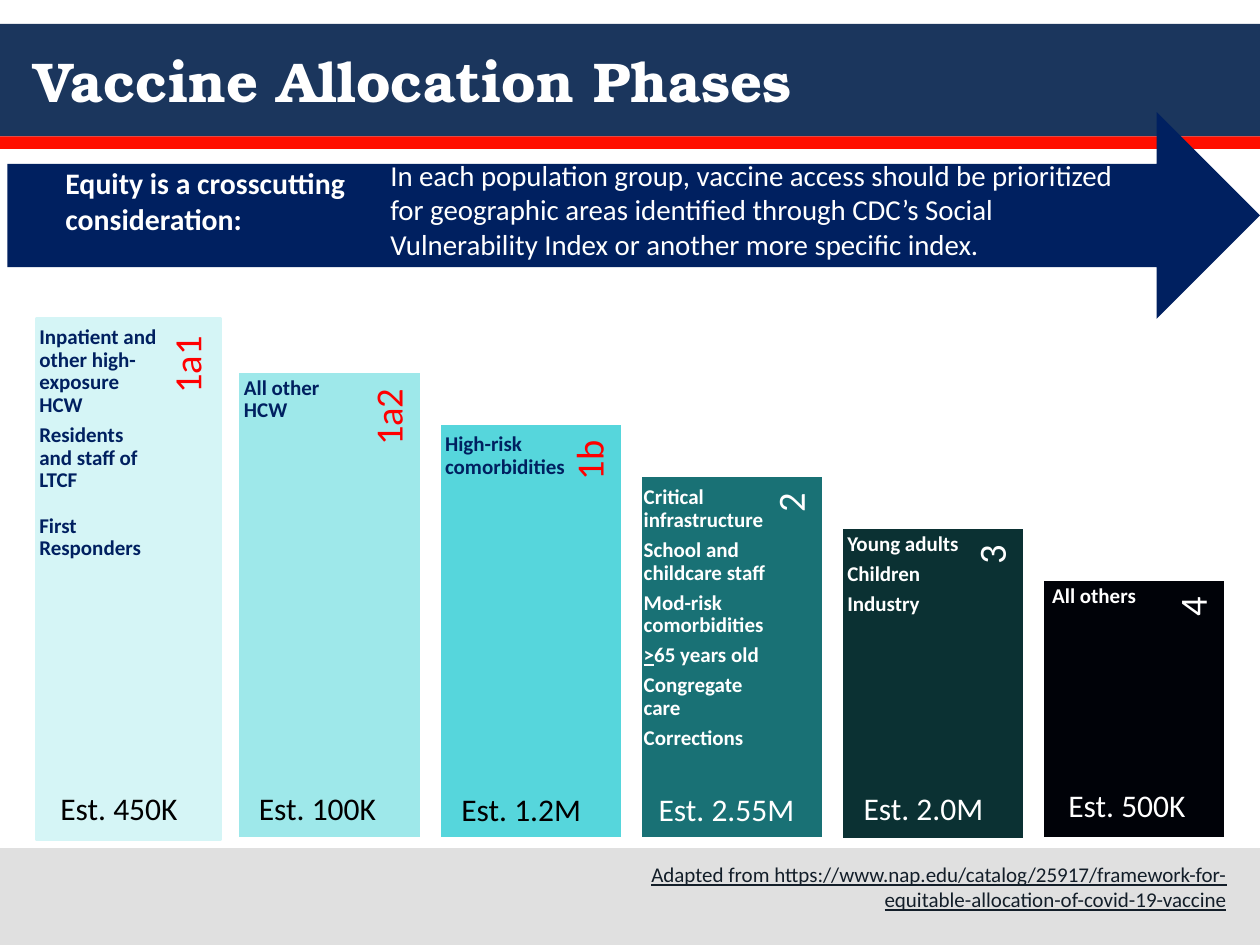
import pptx
import pptx.util
import pptx.dml.color
import pptx.enum.shapes
import pptx.enum.text
from dataclasses import dataclass

Pt = pptx.util.Pt
SHAPES = pptx.enum.shapes.MSO_SHAPE
ALIGN = pptx.enum.text.PP_ALIGN
ANCHOR = pptx.enum.text.MSO_ANCHOR
NAVY, WHITE, RED, BLACK = "002060", "FFFFFF", "FF0000", "000000"
INSETS = (7.2, 3.6, 7.2, 3.6)
WIDTH, HEIGHT = 720, 540


@dataclass
class Phase:
    label: str
    groups: list
    estimate: str
    fill: str
    line: str
    label_color: str
    group_color: str
    estimate_color: str
    groups_box: tuple
    estimate_offset: tuple


PHASES = [
    Phase("1a1", ["Inpatient and other high-exposure HCW", "Residents and staff of LTCF",
                  "First Responders"],
          "Est. 450K", "D5F5F6", "D5F5F6", RED, NAVY, BLACK, (-2, 0.7, 76.3), (6.5, 32.4)),
    Phase("1a2", ["All other HCW"],
          "Est. 100K", "9EE8EA", WHITE, RED, NAVY, BLACK, (0, 0, 73.4), (5, 32.4)),
    Phase("1b", ["High-risk comorbidities"],
          "Est. 1.2M", "56D6DC", WHITE, RED, NAVY, BLACK, (0, 2.2, 93.6), (5.8, 31.7)),
    Phase("2", ["Critical infrastructure", "School and childcare staff", "Mod-risk comorbidities",
                ">65 years old", "Congregate care", "Corrections"],
          "Est. 2.55M", "197175", WHITE, WHITE, WHITE, WHITE, (-1.4, 2.9, 79.9), (3.6, 31.7)),
    Phase("3", ["Young adults", "Children", "Industry"],
          "Est. 2.0M", "0B3133", WHITE, WHITE, WHITE, WHITE, (0, 0, 73.4), (5.8, 32.4)),
    Phase("4", ["All others"],
          "Est. 500K", "000208", WHITE, WHITE, WHITE, WHITE, (2.2, 0, 69.8), (7.9, 33.8)),
]


def rgb(color):
    return pptx.dml.color.RGBColor.from_string(color)


def add_block(slide, left, top, width, height, fill, kind=SHAPES.RECTANGLE, line=None):
    shape = slide.shapes.add_shape(kind, Pt(left), Pt(top), Pt(width), Pt(height))
    shape.shadow.inherit = False
    shape.fill.solid()
    shape.fill.fore_color.rgb = rgb(fill)
    if line:
        shape.line.color.rgb = rgb(line)
        shape.line.width = Pt(2)
    else:
        shape.line.fill.background()
    return shape


def add_text(slide, left, top, width, height, texts, size, color, font="Calibri", bold=False,
             underline=False, align=ALIGN.LEFT, anchor=ANCHOR.TOP, insets=INSETS, spacing=None):
    box = slide.shapes.add_textbox(Pt(left), Pt(top), Pt(width), Pt(height))
    frame = box.text_frame
    frame.word_wrap = True
    frame.vertical_anchor = anchor
    frame.margin_left, frame.margin_top, frame.margin_right, frame.margin_bottom = map(Pt, insets)
    for index, text in enumerate(texts):
        paragraph = frame.paragraphs[0] if index == 0 else frame.add_paragraph()
        if text.startswith(">"):
            paragraph.add_run().text = ">"
            paragraph.runs[0].font.underline = True
            text = text[1:]
        paragraph.add_run().text = text
        paragraph.alignment = align
        if spacing:
            paragraph.line_spacing = spacing
        paragraph.font.name = font
        paragraph.font.size = Pt(size)
        paragraph.font.bold = bold
        paragraph.font.color.rgb = rgb(color)
        if underline:
            paragraph.font.underline = True
    return box


def add_header(slide, left, top, width, height):
    add_block(slide, left, top, width, height, "1B365D")
    add_block(slide, left, top + height, width, 7.2, "FF0F00")
    add_text(slide, left + 12, top, width - 24, height, ["Vaccine Allocation Phases"], 32, WHITE,
             font="TeX Gyre Bonum", bold=True, anchor=ANCHOR.MIDDLE)


def add_equity_arrow(slide, left, top, width, height):
    add_block(slide, left, top, width, height, NAVY, SHAPES.RIGHT_ARROW)
    add_text(slide, left + 26, top + 26.6, 180, 48, ["Equity is a crosscutting consideration:"],
             17, WHITE, bold=True)
    add_text(slide, left + 211.7, top + 22.3, 436.3, 69,
             ["In each population group, vaccine access should be prioritized for geographic areas "
              "identified through CDC’s Social Vulnerability Index or another more specific index."],
             16.5, WHITE)


def add_phase(slide, phase, left, top, width, height):
    add_block(slide, left, top, width, height, phase.fill, line=phase.line)
    length, thickness = height * 0.9, 27.4
    label = add_text(slide, left + 88.2 - length / 2, top + (length - thickness) / 2,
                     length, thickness, [phase.label], 22, phase.label_color, align=ALIGN.RIGHT,
                     anchor=ANCHOR.MIDDLE, insets=(6.5, 0, 10, 2.2), spacing=0.9)
    label.rotation = 270
    shift, drop, groups_width = phase.groups_box
    groups = add_text(slide, left + shift, top + drop, groups_width, height, phase.groups, 12,
                      phase.group_color, bold=True, insets=(3.6,) * 4, spacing=0.9)
    for paragraph in groups.text_frame.paragraphs:
        wide = paragraph.text.startswith("Residents")
        paragraph.space_after = Pt(13 if wide else 4.2)
    shift, rise = phase.estimate_offset
    add_text(slide, left + shift, top + height - rise, 104.4, 29, [phase.estimate], 18,
             phase.estimate_color)


def add_phases(slide, left, top, width, height):
    bar_width, step = 105.1, 29.8
    pitch = (width - bar_width) / (len(PHASES) - 1)
    for index, phase in enumerate(PHASES):
        drop = index * step
        add_phase(slide, phase, left + index * pitch, top + drop, bar_width, height - drop)


def add_footer(slide, left, top, width, height):
    add_block(slide, left, top, width, height, "E0E0E0")
    add_text(slide, left + width / 2, top + 4.3, width / 2 - 12, 36,
             ["Adapted from https://www.nap.edu/catalog/25917/"
              "framework-for-equitable-allocation-of-covid-19-vaccine"],
             12, "131E29", underline=True, align=ALIGN.RIGHT)


def main():
    presentation = pptx.Presentation()
    presentation.slide_width, presentation.slide_height = Pt(WIDTH), Pt(HEIGHT)
    slide = presentation.slides.add_slide(presentation.slide_layouts[6])
    add_header(slide, 0, 13.7, WIDTH, 64.2)
    add_footer(slide, 0, 484.6, WIDTH, 55.4)
    add_phases(slide, 20.9, 182.2, 679.7, 297.4)
    add_equity_arrow(slide, 4.3, 64.1, 715.7, 118.1)
    presentation.save("out.pptx")


if __name__ == "__main__":
    main()
